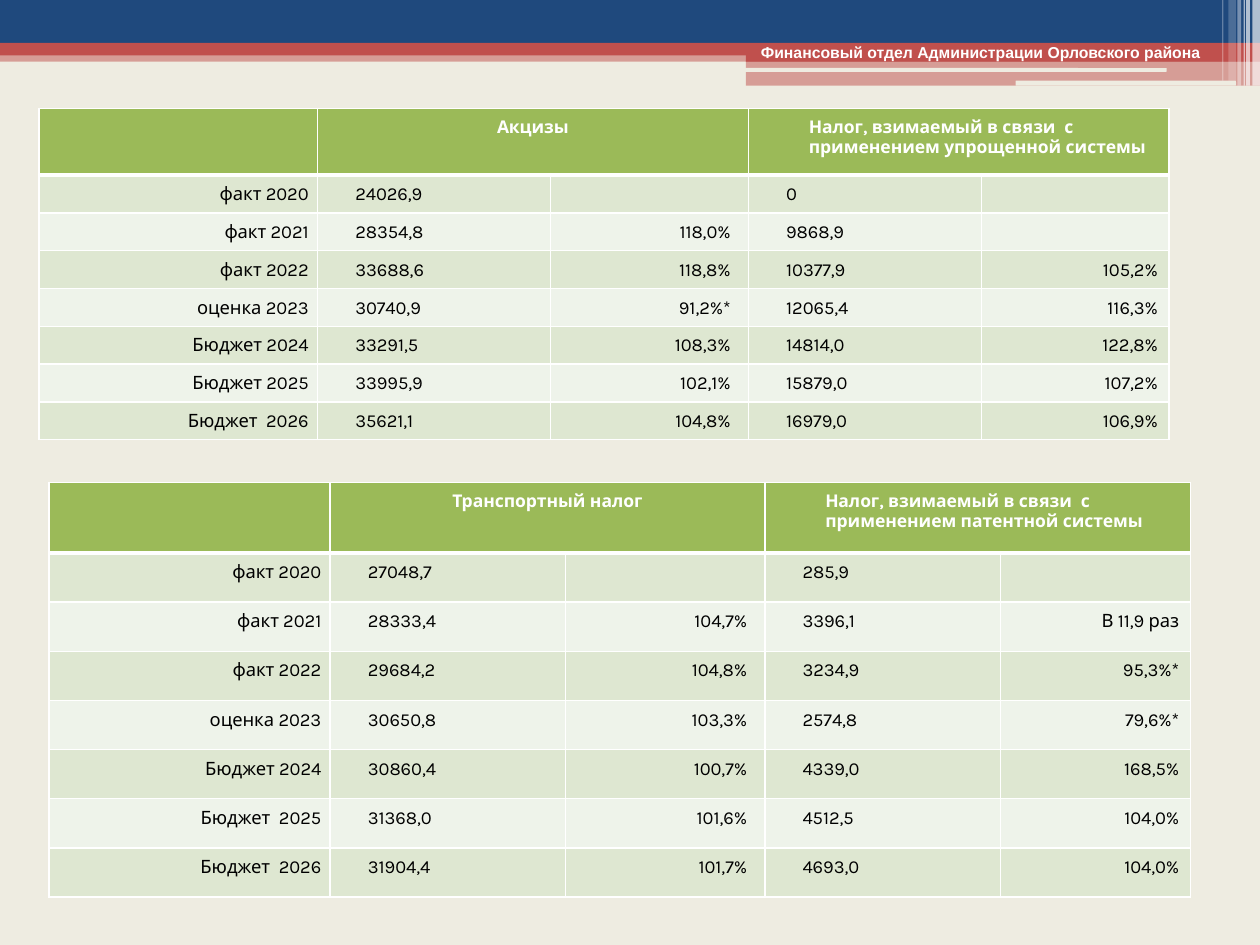
from lxml.etree import SubElement
from pptx import Presentation
from pptx.dml.color import RGBColor
from pptx.enum.shapes import MSO_SHAPE
from pptx.enum.text import PP_ALIGN
from pptx.oxml.ns import qn
from pptx.util import Inches, Pt

COLORS = {
    "background": "EEECE1", "navy": "1F497D", "red": "C0504D",
    "white": "FFFFFF", "black": "000000",
    "header": "9BBA58", "dark row": "DEE7D1", "light row": "EEF3EA",
}

# left, top, width, height, colour, opacity in percent
BANDS = [
    (0, 0.4, 10, 0.09, "red", 50),
    (0, 0, 10, 0.34, "navy", 100),
    (0, 0.34, 10, 0.1, "red", 100),
    (5.92, 0.39, 4.08, 0.1, "red", 100),
    (5.92, 0.48, 4.08, 0.2, "red", 50),
]
ROUNDED_BARS = [
    (5.91, 0.54, 3.35, 0.03, "background", 100),
    (8.06, 0.64, 1.75, 0.04, "background", 100),
]
STRIPES = [
    (9.94, 0, 0.06, 0.68, "white", 65),
    (9.89, 0, 0.03, 0.68, "white", 65),
    (9.87, 0, 0.01, 0.68, "white", 60),
    (9.82, 0, 0.03, 0.68, "white", 40),
    (9.75, 0, 0.06, 0.64, "white", 20),
    (9.7, 0, 0.01, 0.64, "white", 30),
]

EXCISE_HEADINGS = ["Акцизы", "Налог, взимаемый в связи  с применением упрощенной системы"]
EXCISE_ROWS = [
    ("факт 2020", "24026,9", "", "0", ""),
    ("факт 2021", "28354,8", "118,0%", "9868,9", ""),
    ("факт 2022", "33688,6", "118,8%", "10377,9", "105,2%"),
    ("оценка 2023", "30740,9", "91,2%*", "12065,4", "116,3%"),
    ("Бюджет 2024", "33291,5", "108,3%", "14814,0", "122,8%"),
    ("Бюджет 2025", "33995,9", "102,1%", "15879,0", "107,2%"),
    ("Бюджет  2026", "35621,1", "104,8%", "16979,0", "106,9%"),
]
TRANSPORT_HEADINGS = ["Транспортный налог",
                      "Налог, взимаемый в связи  с применением патентной системы"]
TRANSPORT_ROWS = [
    ("факт 2020", "27048,7", "", "285,9", ""),
    ("факт 2021", "28333,4", "104,7%", "3396,1", "В 11,9 раз"),
    ("факт 2022", "29684,2", "104,8%", "3234,9", "95,3%*"),
    ("оценка 2023", "30650,8", "103,3%", "2574,8", "79,6%*"),
    ("Бюджет 2024", "30860,4", "100,7%", "4339,0", "168,5%"),
    ("Бюджет  2025", "31368,0", "101,6%", "4512,5", "104,0%"),
    ("Бюджет  2026", "31904,4", "101,7%", "4693,0", "104,0%"),
]

# alignment, left indent, right indent of each body column
COLUMN_STYLES = [
    (PP_ALIGN.RIGHT, 0, 0.07),
    (PP_ALIGN.LEFT, 0.3, 0),
    (PP_ALIGN.RIGHT, 0, 0.14),
    (PP_ALIGN.LEFT, 0.3, 0),
    (PP_ALIGN.RIGHT, 0, 0.09),
]
HEADING_STYLES = {1: (PP_ALIGN.CENTER, 0, 0), 3: (PP_ALIGN.LEFT, 0.48, 0)}


def color(name):
    return RGBColor.from_string(COLORS[name])


def add_bars(page, bars, preset=MSO_SHAPE.RECTANGLE):
    for left, top, width, height, fill, opacity in bars:
        bar = page.shapes.add_shape(
            preset, Inches(left), Inches(top), Inches(width), Inches(height))
        bar.shadow.inherit = False
        bar.line.fill.background()
        bar.fill.solid()
        bar.fill.fore_color.rgb = color(fill)
        if opacity < 100:
            tint = bar.fill._xPr.find(".//" + qn("a:srgbClr"))
            SubElement(tint, qn("a:alpha"), val=str(opacity * 1000))


def add_span(para, text, size, font, fill, bold):
    span = para.add_run()
    span.text = text
    span.font.size = Pt(size)
    span.font.name = font
    span.font.bold = bold
    span.font.color.rgb = color(fill)


def add_department(page):
    box = page.shapes.add_textbox(Inches(5.94), Inches(0.29), Inches(3.91), Inches(0.25))
    box.text_frame.word_wrap = True
    add_span(box.text_frame.paragraphs[0], "Финансовый отдел Администрации Орловского района",
             9, "Arial", "white", True)


def set_borders(cell, top, bottom):
    properties = cell._tc.get_or_add_tcPr()
    for side, width in (("L", 1), ("R", 1), ("T", top), ("B", bottom)):
        line = SubElement(properties, qn(f"a:ln{side}"), w=str(Pt(width)))
        fill = SubElement(line, qn("a:solidFill"))
        SubElement(fill, qn("a:srgbClr"), val=COLORS["white"])


def fill_cell(cell, text, style, fill, is_heading):
    cell.margin_left = cell.margin_right = cell.margin_bottom = 0
    cell.margin_top = Inches(0.07)
    cell.fill.solid()
    cell.fill.fore_color.rgb = color(fill)
    para = cell.text_frame.paragraphs[0]
    alignment, left, right = style
    para.alignment = alignment
    indents = para._p.get_or_add_pPr()
    indents.set("marL", str(Inches(left)))
    indents.set("marR", str(Inches(right)))
    size = 10 if is_heading else 10.5
    if text:
        add_span(para, text, size, "Karla", "white" if is_heading else "black", is_heading)
    else:
        # keeps an empty cell from stretching its row
        SubElement(para._p, qn("a:endParaRPr"), sz=str(int(size * 100)))


def add_tax_table(page, left, top, widths, header_height, row_height, headings, rows):
    heights = [header_height] + [row_height] * len(rows)
    table = page.shapes.add_table(
        len(heights), len(widths), Inches(left), Inches(top),
        Inches(sum(widths)), Inches(sum(heights))).table
    for column, width in zip(table.columns, widths):
        column.width = Inches(width)
    for row, height in zip(table.rows, heights):
        row.height = Inches(height)

    lines = [("", headings[0], "", headings[1], "")] + rows
    for r, line in enumerate(lines):
        is_heading = r == 0
        fill = "header" if is_heading else "dark row" if r % 2 else "light row"
        for c, text in enumerate(line):
            style = COLUMN_STYLES[c]
            if is_heading:
                style = HEADING_STYLES.get(c, style)
            cell = table.cell(r, c)
            set_borders(cell, top=3 if r == 1 else 1, bottom=3 if is_heading else 1)
            fill_cell(cell, text, style, fill, is_heading)
    for c in HEADING_STYLES:
        table.cell(0, c).merge(table.cell(0, c + 1))


def main():
    deck = Presentation()
    deck.slide_width, deck.slide_height = Inches(10), Inches(7.5)
    page = deck.slides.add_slide(deck.slide_layouts[6])
    page.background.fill.solid()
    page.background.fill.fore_color.rgb = color("background")

    add_bars(page, BANDS)
    add_bars(page, ROUNDED_BARS, MSO_SHAPE.ROUNDED_RECTANGLE)
    add_bars(page, STRIPES)
    add_department(page)
    add_tax_table(page, 0.31, 0.86, [2.21, 1.85, 1.57, 1.85, 1.49], 0.53, 0.3,
                  EXCISE_HEADINGS, EXCISE_ROWS)
    add_tax_table(page, 0.39, 3.83, [2.23, 1.87, 1.58, 1.87, 1.51], 0.56, 0.39,
                  TRANSPORT_HEADINGS, TRANSPORT_ROWS)
    deck.save("out.pptx")


if __name__ == "__main__":
    main()
